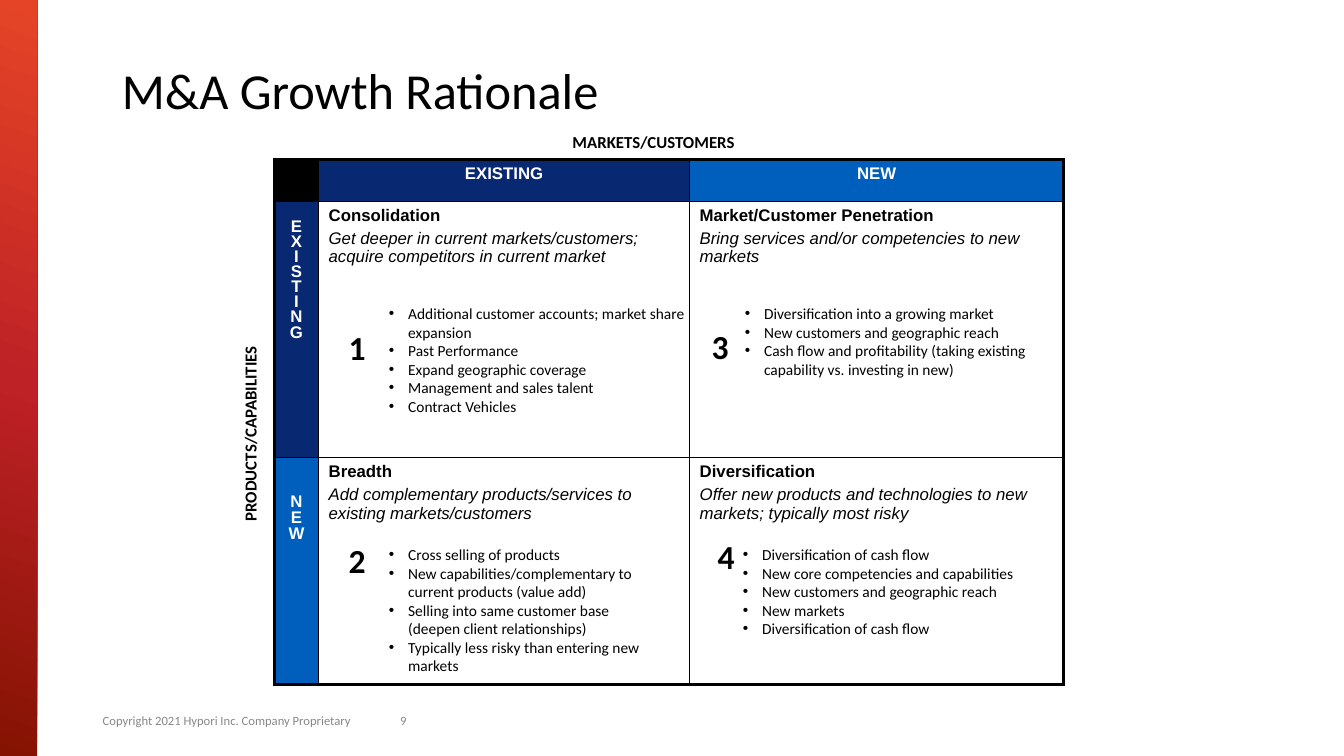
from copy import deepcopy

from lxml.etree import SubElement
from pptx import Presentation
from pptx.dml.color import RGBColor
from pptx.enum.shapes import MSO_SHAPE
from pptx.enum.text import MSO_ANCHOR, PP_ALIGN
from pptx.oxml import parse_xml
from pptx.oxml.ns import nsdecls, qn
from pptx.util import Inches, Pt

BLACK = RGBColor(0x00, 0x00, 0x00)
WHITE = RGBColor(0xFF, 0xFF, 0xFF)
GRAY = RGBColor(0x88, 0x88, 0x88)
NAVY = RGBColor(0x08, 0x29, 0x72)
BLUE = RGBColor(0x00, 0x5E, 0xBC)
DARK_RED = RGBColor(0x85, 0x13, 0x02)
RED = RGBColor(0xBE, 0x21, 0x26)
ORANGE = RGBColor(0xE5, 0x45, 0x26)


def write(frame, text, size=12, font="Calibri", color=BLACK, bold=False, italic=False,
          align=PP_ALIGN.LEFT, line_spacing=1.0, space_before=0, bullet=False):
    """Add one paragraph, using the empty first paragraph when there is one."""
    paragraph = frame.paragraphs[0]
    if paragraph.runs:
        paragraph = frame.add_paragraph()
        paragraph.space_before = Pt(space_before)
    paragraph.alignment = align
    paragraph.line_spacing = line_spacing
    if bullet:
        properties = paragraph._p.get_or_add_pPr()
        properties.set("marL", str(Inches(0.19)))
        properties.set("indent", str(-Inches(0.19)))
        SubElement(properties, qn("a:buFont"), typeface="Arial")
        SubElement(properties, qn("a:buChar"), char="•")
    run = paragraph.add_run()
    run.text = text
    run.font.size = Pt(size)
    run.font.name = font
    run.font.bold = bold
    run.font.italic = italic
    run.font.color.rgb = color


def set_borders(cell, widths):
    """Draw black borders; widths are points for left, right, top, bottom."""
    properties = cell._tc.get_or_add_tcPr()
    for index, (side, width) in enumerate(zip("LRTB", widths)):
        properties.insert(index, parse_xml(
            f'<a:ln{side} {nsdecls("a")} w="{Pt(width)}"><a:solidFill>'
            f'<a:srgbClr val="{BLACK}"/></a:solidFill></a:ln{side}>'))


presentation = Presentation()
presentation.slide_width = Inches(13.33)
presentation.slide_height = Inches(7.5)
slide = presentation.slides.add_slide(presentation.slide_layouts[6])

# Gradient side bar
bar = slide.shapes.add_shape(MSO_SHAPE.RECTANGLE, 0, 0, Inches(0.37), Inches(7.5))
bar.shadow.inherit = False
bar.line.fill.background()
bar.fill.gradient()
bar.fill.gradient_angle = 70
stop_list = bar._element.spPr.find(".//" + qn("a:gsLst"))
stop_list.append(deepcopy(stop_list[0]))
for stop, position, color in zip(bar.fill.gradient_stops, (0, 0.49, 1), (DARK_RED, RED, ORANGE)):
    stop.position = position
    stop.color.rgb = color

# Growth matrix
table_frame = slide.shapes.add_table(3, 3, Inches(2.72), Inches(1.58), Inches(7.83), Inches(5.21))
table = table_frame.table
for column, width in zip(table.columns, (0.44, 3.68, 3.71)):
    column.width = Inches(width)
for row, height in zip(table.rows, (0.42, 2.54, 2.25)):
    row.height = Inches(height)

fills = [[BLACK, NAVY, BLUE], [NAVY, WHITE, WHITE], [BLUE, WHITE, WHITE]]
for row in range(3):
    for column in range(3):
        cell = table.cell(row, column)
        cell.fill.solid()
        cell.fill.fore_color.rgb = fills[row][column]
        outer_edges = (column == 0, column == 2, row == 0, row == 2)
        set_borders(cell, [2.25 if outer else 1 for outer in outer_edges])

heading = dict(font="Arial", bold=True, color=WHITE, align=PP_ALIGN.CENTER)
for index, label, margin, gap in ((1, "EXISTING", 0.22, 2.7), (2, "NEW", 0.41, 3.3)):
    write(table.cell(0, index).text_frame, label, **heading)
    side_cell = table.cell(index, 0)
    side_cell.margin_top = Inches(margin)
    for letter in label:
        write(side_cell.text_frame, letter, line_spacing=0.6, space_before=gap, **heading)

strategies = [
    (1, 1, "Consolidation",
     "Get deeper in current markets/customers; acquire competitors in current market"),
    (1, 2, "Market/Customer Penetration", "Bring services and/or competencies to new markets"),
    (2, 1, "Breadth", "Add complementary products/services to existing markets/customers"),
    (2, 2, "Diversification",
     "Offer new products and technologies to new markets; typically most risky"),
]
for row, column, name, summary in strategies:
    frame = table.cell(row, column).text_frame
    write(frame, name, font="Arial", bold=True)
    write(frame, summary, font="Arial", italic=True, space_before=2.5)

# Text boxes: left, top, width, height, lines, format
footer = dict(size=9, color=GRAY)
label = dict(bold=True)
number = dict(size=24, bold=True)
points = dict(size=11, bullet=True)
boxes = [
    (1.11, 0.6, 10.62, 0.64, ["M&A Growth Rationale"], dict(size=36, line_spacing=0.9)),
    (0.92, 6.95, 2.85, 0.4, ["Copyright 2021 Hypori Inc. Company Proprietary"], footer),
    (3.87, 6.95, 0.83, 0.4, ["9"], footer),
    (5.58, 1.26, 2.5, 0.3, ["MARKETS/CUSTOMERS"], label),
    (2.33, 2.83, 0.4, 2.44, ["PRODUCTS/CAPABILITIES"], label),
    (3.36, 3.19, 0.8, 0.5, ["1"], number),
    (3.36, 5.31, 0.8, 0.5, ["2"], number),
    (6.96, 3.18, 0.8, 0.5, ["3"], number),
    (7.02, 5.27, 0.8, 0.5, ["4"], number),
    (3.76, 2.97, 3.2, 1.21, [
        "Additional customer accounts; market share expansion",
        "Past Performance",
        "Expand geographic coverage",
        "Management and sales talent",
        "Contract Vehicles"], points),
    (3.76, 5.36, 2.93, 1.4, [
        "Cross selling of products",
        "New capabilities/complementary to current products (value add)",
        "Selling into same customer base (deepen client relationships)",
        "Typically less risky than entering new markets"], points),
    (7.29, 2.97, 3.2, 0.84, [
        "Diversification into a growing market",
        "New customers and geographic reach",
        "Cash flow and profitability (taking existing capability vs. investing in new)"], points),
    (7.27, 5.36, 3.2, 1.03, [
        "Diversification of cash flow",
        "New core competencies and capabilities",
        "New customers and geographic reach",
        "New markets",
        "Diversification of cash flow"], points),
]
for left, top, width, height, lines, text_format in boxes:
    box = slide.shapes.add_textbox(Inches(left), Inches(top), Inches(width), Inches(height))
    frame = box.text_frame
    frame.word_wrap = True
    if height > width:
        frame._txBody.bodyPr.set("vert", "vert270")
    if text_format is footer or top < 1:
        frame.vertical_anchor = MSO_ANCHOR.MIDDLE
    for line in lines:
        write(frame, line, **text_format)

presentation.save("out.pptx")
